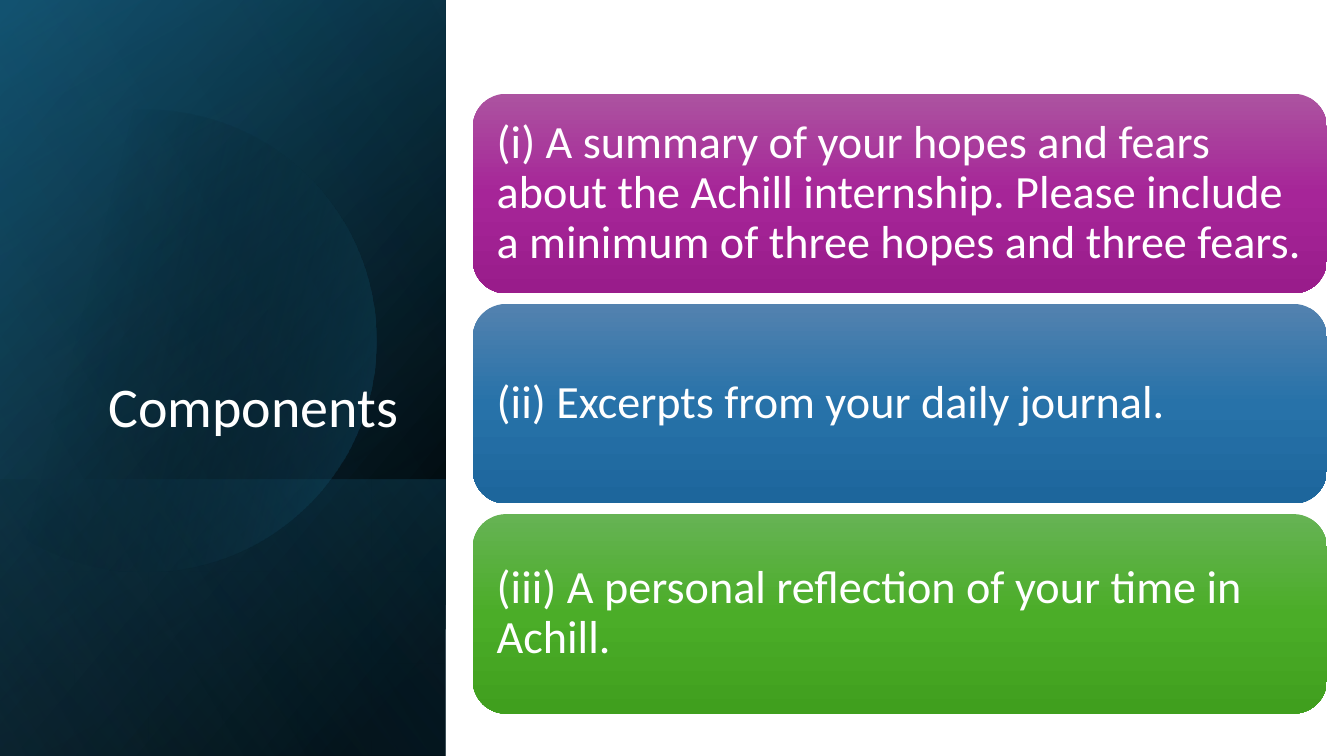
from math import acos, cos, pi, sin

from pptx import Presentation
from pptx.dml.color import RGBColor
from pptx.enum.shapes import MSO_SHAPE as Shape
from pptx.enum.text import MSO_ANCHOR as Anchor, PP_ALIGN as Align
from pptx.oxml import parse_xml
from pptx.oxml.ns import nsdecls, qn
from pptx.util import Inches, Pt

WHITE = RGBColor(0xFF, 0xFF, 0xFF)
BLACK = RGBColor(0x00, 0x00, 0x00)
TEAL = RGBColor(0x15, 0x60, 0x82)
DARK_TEAL = RGBColor(0x10, 0x48, 0x62)
SKY = RGBColor(0x46, 0xB1, 0xE1)
PURPLES = (RGBColor(0xAC, 0x53, 0xA0), RGBColor(0xA6, 0x25, 0x98), RGBColor(0x99, 0x1C, 0x8B))
BLUES = (RGBColor(0x53, 0x82, 0xAF), RGBColor(0x27, 0x72, 0xA9), RGBColor(0x1D, 0x66, 0x9C))
GREENS = (RGBColor(0x66, 0xB3, 0x54), RGBColor(0x4B, 0xAD, 0x28), RGBColor(0x40, 0x9F, 0x1E))

PANEL = (-1.54, 1.54, 7.5, 4.42)
LOWER_PANEL = (0.84, 3.92, 2.74, 4.42)
COMPONENTS = [
    ("(i) A summary of your hopes and fears about the Achill internship. "
     "Please include a minimum of three hopes and three fears.", PURPLES),
    ("(ii) Excerpts from your daily journal.", BLUES),
    ("(iii) A personal reflection of your time in Achill.", GREENS),
]
CARD_TOP, CARD_HEIGHT, CARD_PITCH = 0.93, 1.98, 2.085


def set_text(tf, text, size, align=Align.LEFT, anchor=Anchor.MIDDLE, inset=0.1,
             font="Calibri", color=WHITE):
    tf.word_wrap = True
    tf.vertical_anchor = anchor
    tf.margin_left = tf.margin_right = tf.margin_top = tf.margin_bottom = Inches(inset)
    p = tf.paragraphs[0]
    p.alignment = align
    p.line_spacing = 0.9
    r = p.add_run()
    r.text = text
    r.font.name, r.font.size, r.font.color.rgb = font, Pt(size), color


class Deck:
    def __init__(self):
        self.prs = Presentation()
        self.prs.slide_width, self.prs.slide_height = Inches(13.33), Inches(7.5)
        self.s = self.prs.slides.add_slide(self.prs.slide_layouts[5])

    def gradient(self, sp, stops, angle):
        """Fill with (position %, colour, opacity %) stops, without line or shadow."""
        sp.shadow.inherit = False
        sp.line.fill.background()
        sp.fill.background()
        gs = "".join(
            f'<a:gs pos="{pos * 1000}"><a:srgbClr val="{color}">'
            f'<a:alpha val="{alpha * 1000}"/></a:srgbClr></a:gs>'
            for pos, color, alpha in stops)
        grad = parse_xml(
            f'<a:gradFill {nsdecls("a")} rotWithShape="1"><a:gsLst>{gs}</a:gsLst>'
            f'<a:lin ang="{angle * 60000}" scaled="0"/></a:gradFill>')
        spPr = sp._element.spPr
        spPr.replace(spPr.find(qn("a:noFill")), grad)

    def shape(self, kind, box, stops, angle):
        sp = self.s.shapes.add_shape(kind, *map(Inches, box))
        self.gradient(sp, stops, angle)
        return sp

    def panel(self, box, stops, angle):
        """Add a mirrored rectangle turned by a quarter."""
        sp = self.shape(Shape.RECTANGLE, box, stops, angle)
        sp.rotation = 90
        sp._element.spPr.xfrm.set("flipH", "1")

    def cut_circle(self, cx, cy, radius, cut_x, stops, angle, steps=120):
        """Add a circle whose left side is cut off at cut_x."""
        end = pi - acos((cx - cut_x) / radius)
        turns = [end * (2 * i / steps - 1) for i in range(steps + 1)]
        points = [(Inches(cx + radius * cos(t)), Inches(cy + radius * sin(t))) for t in turns]
        builder = self.s.shapes.build_freeform(*points[0])
        builder.add_line_segments(points[1:], close=True)
        self.gradient(builder.convert_to_shape(), stops, angle)

    def title(self, text, box):
        sp = self.s.shapes.title
        sp.left, sp.top, sp.width, sp.height = map(Inches, box)
        set_text(sp.text_frame, text, 40, align=Align.RIGHT, anchor=Anchor.BOTTOM)
        self.s.shapes._spTree.append(sp._element)  # in front of the panels

    def card(self, box, text, colors):
        stops = [(pos, color, 100) for pos, color in zip((0, 50, 100), colors)]
        sp = self.shape(Shape.ROUNDED_RECTANGLE, box, stops, 90)
        set_text(sp.text_frame, text, 33, inset=0.14)


def main():
    deck = Deck()
    deck.panel(PANEL, [(8, BLACK, 100), (100, DARK_TEAL, 100)], 50)
    deck.panel(PANEL, [(0, BLACK, 0), (99, TEAL, 46)], 30)
    deck.panel(LOWER_PANEL, [(2, TEAL, 29), (100, BLACK, 30)], 130)
    deck.cut_circle(1.44, 3.38, 2.29, -0.15, [(29, BLACK, 0), (100, TEAL, 43)], 14)
    deck.panel(PANEL, [(0, BLACK, 0), (99, SKY, 11)], 120)
    deck.title("Components", (0.64, 1.84, 3.41, 2.62))
    for i, (text, colors) in enumerate(COMPONENTS):
        deck.card((4.69, CARD_TOP + i * CARD_PITCH, 8.47, CARD_HEIGHT), text, colors)
    deck.prs.save("out.pptx")


if __name__ == "__main__":
    main()
